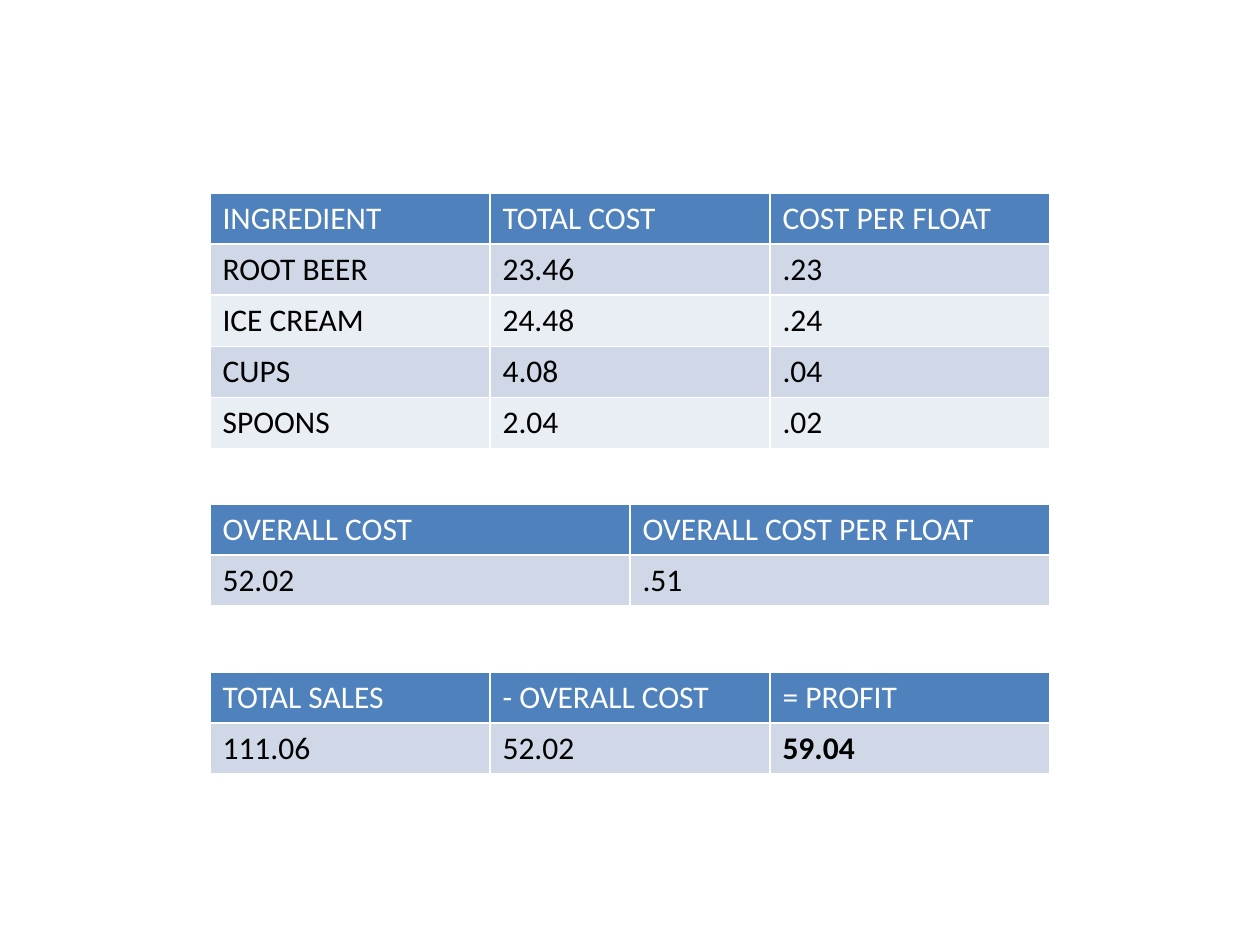
from pptx import Presentation
from pptx.dml.color import RGBColor as RGB
from pptx.util import Pt

PX = 914400 // 126
LEFT, WIDTH, ROW = 210, 840, 51
WHITE = RGB(0xFF, 0xFF, 0xFF)
BLACK = RGB(0x00, 0x00, 0x00)
BLUE = RGB(0x4F, 0x81, 0xBD)
BANDS = RGB(0xD0, 0xD8, 0xE8), RGB(0xE9, 0xED, 0xF4)

COSTS = [
    ("INGREDIENT", "TOTAL COST", "COST PER FLOAT"),
    ("ROOT BEER", "23.46", ".23"),
    ("ICE CREAM", "24.48", ".24"),
    ("CUPS", "4.08", ".04"),
    ("SPOONS", "2.04", ".02"),
]
TOTALS = [("OVERALL COST", "OVERALL COST PER FLOAT"), ("52.02", ".51")]
PROFIT = [
    ("TOTAL SALES", "- OVERALL COST", "= PROFIT"),
    ("111.06", "52.02", "59.04"),
]


def style(cell, text, fill, color):
    """Write a cell's text and set its fill and font."""
    cell.text = text
    cell.fill.solid()
    cell.fill.fore_color.rgb = fill
    font = cell.text_frame.paragraphs[0].font
    font.name, font.size, font.bold = "Calibri", Pt(18), False
    font.color.rgb = color


def add_grid(slide, data, left, top, width):
    """Add a table with equal columns, a blue header and banded rows."""
    box = (n * PX for n in (left, top, width, ROW * len(data)))
    table = slide.shapes.add_table(len(data), len(data[0]), *box).table
    for row, texts in enumerate(data):
        fill = BANDS[(row - 1) % 2] if row else BLUE
        color = BLACK if row else WHITE
        for col, text in enumerate(texts):
            style(table.cell(row, col), text, fill, color)
    return table


def main():
    """Build the slide of costs, totals and profit."""
    deck = Presentation()
    deck.slide_width, deck.slide_height = 9144000, 6858000
    slide = deck.slides.add_slide(deck.slide_layouts[6])
    add_grid(slide, COSTS, LEFT, 193, WIDTH)
    add_grid(slide, TOTALS, LEFT, 504, WIDTH)
    profit = add_grid(slide, PROFIT, LEFT, 672, WIDTH)
    profit.cell(1, 2).text_frame.paragraphs[0].font.bold = True
    deck.save("out.pptx")


if __name__ == "__main__":
    main()
